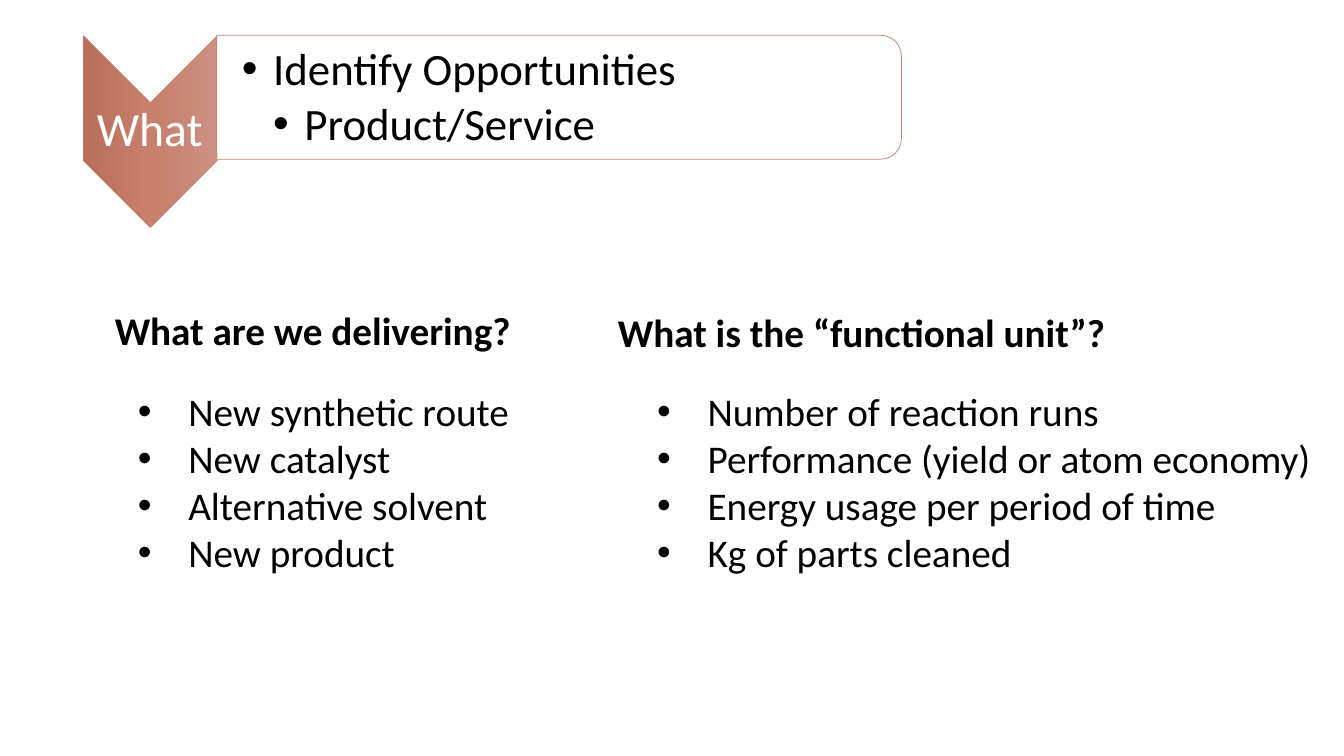
import copy

import pptx
import pptx.dml.color
import pptx.enum.shapes
import pptx.enum.text
import pptx.oxml.ns
import pptx.util
from lxml import etree

Inches, Pt = pptx.util.Inches, pptx.util.Pt
RGBColor = pptx.dml.color.RGBColor
SHAPE = pptx.enum.shapes.MSO_SHAPE
ALIGN = pptx.enum.text.PP_ALIGN
ANCHOR = pptx.enum.text.MSO_ANCHOR
qn = pptx.oxml.ns.qn

BLACK = RGBColor(0x00, 0x00, 0x00)
WHITE = RGBColor(0xFF, 0xFF, 0xFF)
OUTLINE = RGBColor(0xC4, 0x81, 0x70)
CLAY = (RGBColor(0xCB, 0x90, 0x82), RGBColor(0xC8, 0x7F, 0x6C), RGBColor(0xB7, 0x6E, 0x5B))


class SlideBuilder:
    font = "Calibri"

    def __init__(self, slide):
        self.slide = slide

    def turned_shape(self, kind, left, top, width, height):
        """Outlined shape turned a quarter clockwise."""
        shape = self.slide.shapes.add_shape(
            kind, Inches(left), Inches(top), Inches(width), Inches(height))
        shape.rotation = 90
        shape.shadow.inherit = False
        shape.line.color.rgb = OUTLINE
        shape.line.width = Pt(0.5)
        return shape

    def gradient(self, shape, colors):
        shape.fill.gradient()
        shape.fill.gradient_angle = 270
        stops = shape._element.spPr.find(".//" + qn("a:gsLst"))
        while len(stops) < len(colors):
            stops.append(copy.deepcopy(stops[0]))
        for i, (stop, color) in enumerate(zip(shape.fill.gradient_stops, colors)):
            stop.position = i / (len(colors) - 1)
            stop.color.rgb = color

    def solid(self, shape, color, opacity):
        shape.fill.solid()
        shape.fill.fore_color.rgb = color
        value = shape._element.spPr.find(qn("a:solidFill"))[0]
        etree.SubElement(value, qn("a:alpha")).set("val", str(opacity * 1000))

    def text(self, lines, left, top, width, height, size=28, color=BLACK, bold=False,
             align=ALIGN.LEFT, anchor=ANCHOR.TOP, insets=(0.1, 0.05, 0.1, 0.05),
             spacing=1.0, before=0, after=0, hang=0, nested=False):
        """Text box; a hang adds bullets, nested steps each line one level in."""
        box = self.slide.shapes.add_textbox(
            Inches(left), Inches(top), Inches(width), Inches(height))
        frame = box.text_frame
        frame.word_wrap = True
        frame.vertical_anchor = anchor
        (frame.margin_left, frame.margin_top,
         frame.margin_right, frame.margin_bottom) = map(Inches, insets)
        for i, line in enumerate(lines):
            paragraph = frame.paragraphs[0] if i == 0 else frame.add_paragraph()
            paragraph.alignment = align
            paragraph.line_spacing = spacing
            paragraph.space_before, paragraph.space_after = Pt(before), Pt(after)
            paragraph.level = i if nested else 0
            if hang:
                self.bullet(paragraph, hang)
            run = paragraph.add_run()
            run.text = line
            run.font.name, run.font.size = self.font, Pt(size)
            run.font.bold, run.font.color.rgb = bold, color

    def bullet(self, paragraph, hang):
        props = paragraph._p.get_or_add_pPr()
        props.set("marL", str(Inches(hang * (paragraph.level + 1))))
        props.set("indent", str(-Inches(hang)))
        etree.SubElement(props, qn("a:buFont")).set("typeface", "Arial")
        etree.SubElement(props, qn("a:buChar")).set("char", "•")


def main():
    deck = pptx.Presentation()
    deck.slide_width, deck.slide_height = Inches(13.33), Inches(7.5)
    page = SlideBuilder(deck.slides.add_slide(deck.slide_layouts[6]))

    # Banner: chevron label and rounded panel
    chevron = page.turned_shape(SHAPE.CHEVRON, 0.54, 0.64, 1.9, 1.33)
    page.gradient(chevron, CLAY)
    page.text(["What"], 0.82, 1.02, 1.33, 0.57, size=34, color=WHITE, align=ALIGN.CENTER,
              anchor=ANCHOR.MIDDLE, insets=(0.02,) * 4, spacing=0.9, after=12)
    panel = page.turned_shape(SHAPE.ROUND_2_SAME_RECTANGLE, 4.93, -2.43, 1.23, 6.79)
    page.solid(panel, WHITE, 90)
    page.text(["Identify Opportunities", "Product/Service"], 2.15, 0.42, 6.73, 1.11,
              size=32, anchor=ANCHOR.MIDDLE, insets=(0.25, 0.02, 0.02, 0.02),
              spacing=0.9, after=5, hang=0.31, nested=True)

    # Left column: deliverables
    page.text(["What are we delivering?"], 1.04, 3.04, 4.16, 0.66,
              bold=True, spacing=0.9, before=10)
    page.text(["New synthetic route", "New catalyst", "Alternative solvent", "New product"],
              1.27, 3.79, 3.93, 1.99, hang=0.5)

    # Right column: functional unit
    page.text(["What is the “functional unit”?"], 6.03, 3.01, 5.09, 0.57, bold=True)
    page.text(["Number of reaction runs", "Performance (yield or atom economy)",
               "Energy usage per period of time", "Kg of parts cleaned"],
              6.42, 3.79, 6.75, 2.46, hang=0.5)

    deck.save("out.pptx")


if __name__ == "__main__":
    main()
